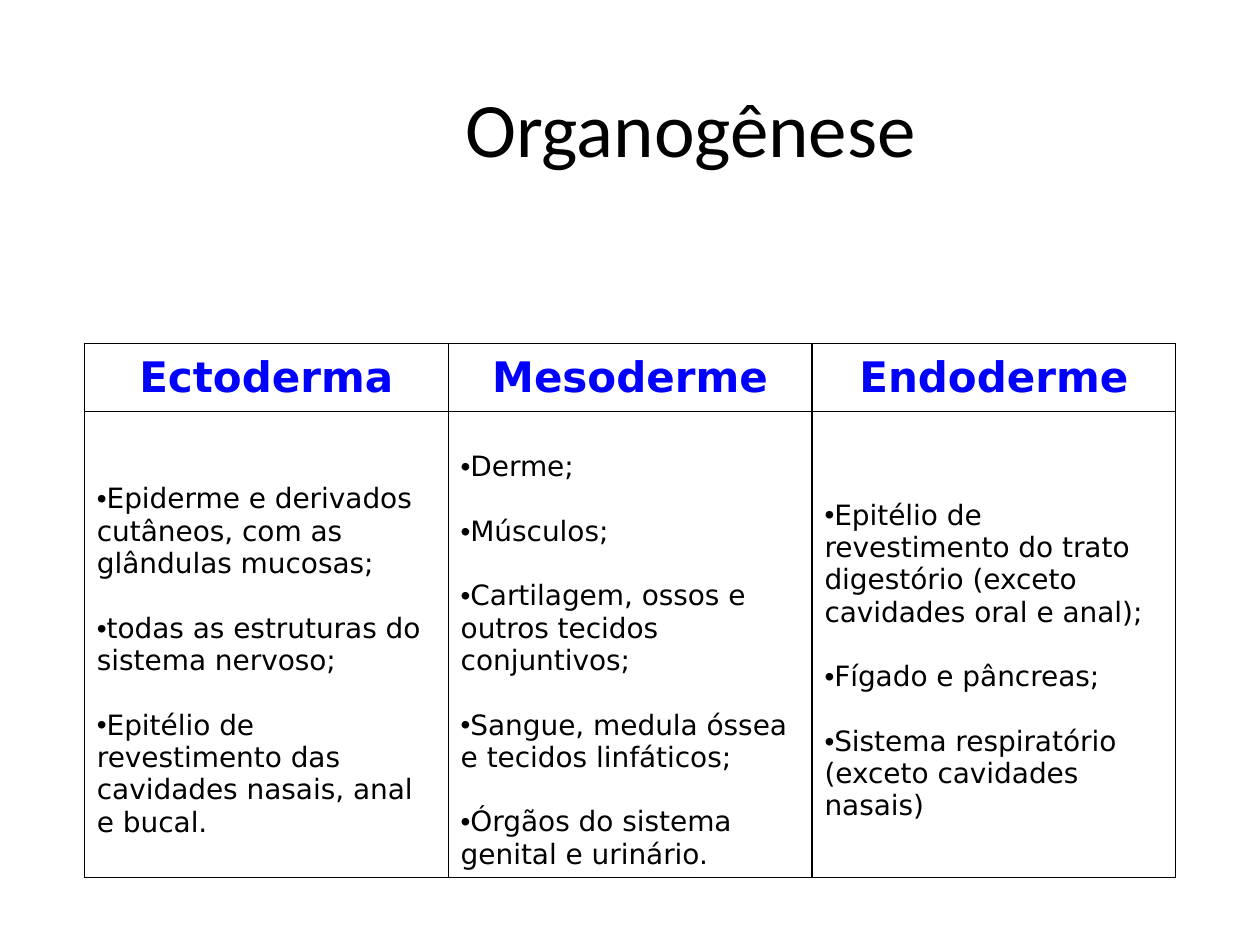
from dataclasses import dataclass

from lxml.etree import SubElement
from pptx import Presentation
from pptx.dml.color import RGBColor as Color
from pptx.enum.text import MSO_ANCHOR as Anchor, PP_ALIGN as Align
from pptx.oxml.ns import qn
from pptx.util import Pt


@dataclass(frozen=True)
class Theme:
    ink: str = "000000"
    heading: str = "0000FF"
    paper: str = "FFFFFF"
    title_font: str = "Calibri"
    table_font: str = "DejaVu Sans"
    bullet_font: str = "Arial"
    title_size: float = 44
    heading_size: float = 24
    body_size: float = 16
    body_gap: float = 18.4
    cell_margin: float = 3.6
    border: float = 0.75


class SlideBuilder:
    def __init__(self, deck, theme):
        self.theme = theme
        self.slide = deck.slides.add_slide(deck.slide_layouts[5])

    def style(self, paragraph, font, size, color, bold=False):
        for run in paragraph.runs:
            run.font.name = font
            run.font.size = Pt(size)
            run.font.bold = bold
            run.font.color.rgb = Color.from_string(color)

    def title(self, wording, left, top, width, height):
        heading = self.slide.shapes.title
        heading.left, heading.top = Pt(left), Pt(top)
        heading.width, heading.height = Pt(width), Pt(height)
        frame = heading.text_frame
        frame.text = wording
        frame.vertical_anchor = Anchor.MIDDLE
        paragraph = frame.paragraphs[0]
        paragraph.alignment = Align.CENTER
        theme = self.theme
        self.style(paragraph, theme.title_font, theme.title_size, theme.ink)

    def outline(self, cell):
        properties = cell._tc.get_or_add_tcPr()
        for side in ("a:lnL", "a:lnR", "a:lnT", "a:lnB"):
            line = SubElement(properties, qn(side), w=str(Pt(self.theme.border)))
            fill = SubElement(line, qn("a:solidFill"))
            SubElement(fill, qn("a:srgbClr"), val=self.theme.ink)

    def cell(self, cell, wording):
        self.outline(cell)
        cell.fill.solid()
        cell.fill.fore_color.rgb = Color.from_string(self.theme.paper)
        cell.vertical_anchor = Anchor.MIDDLE
        cell.text_frame.text = wording
        return cell.text_frame.paragraphs

    def heading_cell(self, cell, wording):
        theme = self.theme
        for paragraph in self.cell(cell, wording):
            paragraph.alignment = Align.CENTER
            self.style(paragraph, theme.table_font, theme.heading_size, theme.heading, True)

    def bullet_cell(self, cell, items):
        theme = self.theme
        for position, paragraph in enumerate(self.cell(cell, "\n".join(items))):
            paragraph.alignment = Align.LEFT
            paragraph.space_before = Pt(theme.body_gap if position else 0)
            properties = paragraph._p.get_or_add_pPr()
            properties.set("marL", "0")
            properties.set("indent", "0")
            SubElement(properties, qn("a:buFont"), typeface=theme.bullet_font)
            SubElement(properties, qn("a:buChar"), char="•")
            self.style(paragraph, theme.table_font, theme.body_size, theme.ink)
        cell.margin_top = Pt(theme.cell_margin + theme.body_gap)

    def table(self, columns, left, top, column_width, row_heights):
        table = self.slide.shapes.add_table(
            len(row_heights), len(columns), Pt(left), Pt(top),
            Pt(column_width * len(columns)), Pt(sum(row_heights)),
        ).table
        table.first_row = table.horz_banding = False
        for row, height in zip(table.rows, row_heights):
            row.height = Pt(height)
        for index, (layer, tissues) in enumerate(columns.items()):
            table.columns[index].width = Pt(column_width)
            self.heading_cell(table.cell(0, index), layer)
            self.bullet_cell(table.cell(1, index), tissues)


GERM_LAYERS = {
    "Ectoderma": [
        "Epiderme e derivados cutâneos, com as glândulas mucosas;",
        "todas as estruturas do sistema nervoso;",
        "Epitélio de revestimento das cavidades nasais, anal e bucal.",
    ],
    "Mesoderme": [
        "Derme;",
        "Músculos;",
        "Cartilagem, ossos e outros tecidos conjuntivos;",
        "Sangue, medula óssea e tecidos linfáticos;",
        "Órgãos do sistema genital e urinário.",
    ],
    "Endoderme": [
        "Epitélio de revestimento do trato digestório (exceto cavidades oral e anal);",
        "Fígado e pâncreas;",
        "Sistema respiratório (exceto cavidades nasais)",
    ],
}


def main():
    deck = Presentation()
    deck.slide_width, deck.slide_height = Pt(720), Pt(540)
    builder = SlideBuilder(deck, Theme())
    builder.title("Organogênese", 88, 14.8, 613.4, 115.2)
    builder.table(GERM_LAYERS, 48.2, 196.4, 207.9, (38.9, 266.2))
    deck.save("out.pptx")


if __name__ == "__main__":
    main()
